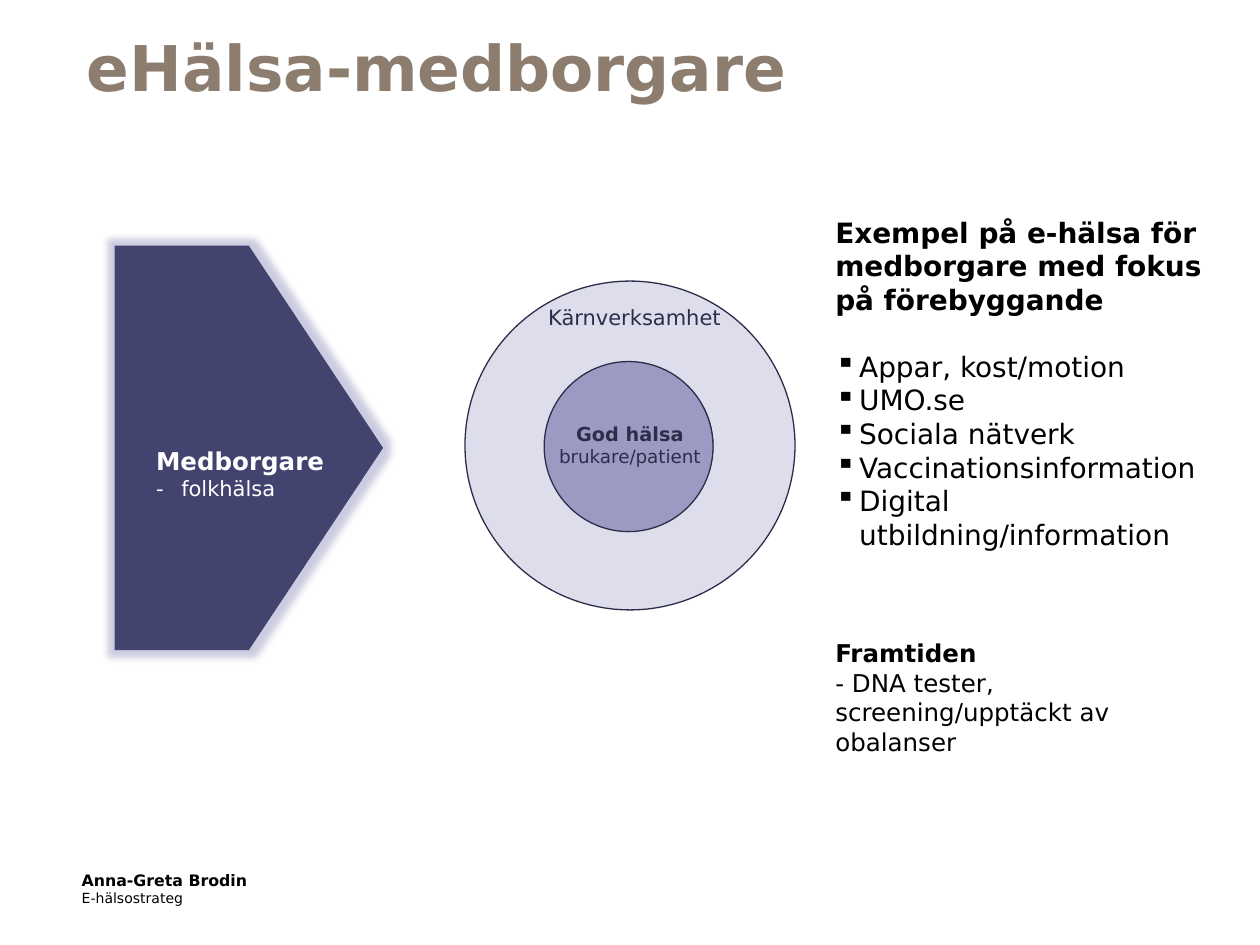
from copy import deepcopy
from dataclasses import dataclass

from lxml.etree import SubElement
from pptx import Presentation
from pptx.dml.color import RGBColor
from pptx.enum.shapes import MSO_SHAPE as Preset
from pptx.enum.text import MSO_ANCHOR as Anchor, MSO_AUTO_SIZE as AutoSize, PP_ALIGN as Align
from pptx.oxml.ns import qn
from pptx.util import Pt


@dataclass(frozen=True)
class Theme:
    font: str = "DejaVu Sans"
    title_color: str = "8C7D6E"
    black: str = "000000"
    white: str = "FFFFFF"
    outline: str = "2D2D4B"
    arrow: str = "434370"
    ring: str = "DDDDEB"
    core: str = "9A9AC2"
    title: float = 36
    heading: float = 16
    subheading: float = 14
    label: float = 12
    core_heading: float = 11
    core_label: float = 10.5
    name: float = 9
    role: float = 8


THEME = Theme()
LEFT, CENTER = Align.LEFT, Align.CENTER
EXAMPLES = ["Appar, kost/motion", "UMO.se", "Sociala nätverk",
            "Vaccinationsinformation", "Digital utbildning/information"]

ARROW = (65.5, 140.4, 153.4, 231.1)
RING = (265.7, 160.6, 188.6, 187.9)
CORE = (311, 206.6, 96.5, 97.2)

RING_LABEL = ((297.4, 170.6, 130.3, 21.6), THEME.outline, CENTER, [
    {"runs": [("Kärnverksamhet", THEME.label, False)]}])
TEXTS = [
    ((82.1, 251.3, 130.3, 38.9), THEME.white, LEFT, [
        {"runs": [("Medborgare", THEME.subheading, True)], "indent": 14.4},
        {"runs": [("-\tfolkhälsa", THEME.label, False)], "indent": 14.4}]),
    ((306, 237.6, 108, 34.6), THEME.outline, CENTER, [
        {"runs": [("God hälsa", THEME.core_heading, True),
                  ("brukare/patient", THEME.core_label, False)]}]),
    ((470.2, 119.5, 226.8, 319.7), THEME.black, LEFT, [
        {"runs": [("Exempel på e-hälsa för medborgare med fokus på förebyggande",
                   THEME.heading, True)], "after": 19},
        *[{"runs": [(example, THEME.heading, False)], "indent": 13.7, "bullet": "▪"}
          for example in EXAMPLES],
        {"runs": [("Framtiden", THEME.subheading, True),
                  ("- DNA tester, screening/upptäckt av obalanser",
                   THEME.subheading, False)], "before": 50}]),
    ((39.6, 493.9, 390.2, 28.1), THEME.black, LEFT, [
        {"runs": [("Anna-Greta Brodin", THEME.name, True)]},
        {"runs": [("E-hälsostrateg", THEME.role, False)], "after": 6}]),
]
TITLE = ((42.5, 9.4, 612, 56.9), THEME.title_color, LEFT, [
    {"runs": [("eHälsa-medborgare", THEME.title, True)]}])


def apply(target, values):
    """Set every attribute in values on target."""
    for name, value in values.items():
        setattr(target, name, value)


def add_preset(shapes, preset, box, fill, line=None):
    """Add a flat filled shape, outlined when a line colour is given."""
    shape = shapes.add_shape(preset, *map(Pt, box))
    shape.shadow.inherit = False
    shape.fill.solid()
    shape.fill.fore_color.rgb = RGBColor.from_string(fill)
    if line:
        shape.line.color.rgb = RGBColor.from_string(line)
        shape.line.width = Pt(0.75)
    else:
        shape.line.fill.background()
    return shape


def add_glow(shape, color, radius, opacity):
    """Surround a shape with a soft glow."""
    effects = shape._element.spPr.find(qn("a:effectLst"))
    glow = SubElement(effects, qn("a:glow"), rad=str(Pt(radius)))
    tint = SubElement(glow, qn("a:srgbClr"), val=color)
    SubElement(tint, qn("a:alpha"), val=str(opacity * 1000))


def fill_paragraph(paragraph, content, color, align):
    """Write one paragraph, with a line break between its runs."""
    properties = paragraph._p.get_or_add_pPr()
    if "indent" in content:
        indent = Pt(content["indent"])
        properties.set("marL", str(indent))
        properties.set("indent", str(-indent))
    if "bullet" in content:
        SubElement(properties, qn("a:buChar"), char=content["bullet"])
    apply(paragraph, {"alignment": align,
                      "space_before": Pt(content.get("before", 0)),
                      "space_after": Pt(content.get("after", 0))})
    for position, (text, size, bold) in enumerate(content["runs"]):
        if position:
            paragraph.add_line_break()
            paragraph._p[-1].append(deepcopy(run._r.rPr))
        run = paragraph.add_run()
        run.text = text
        apply(run.font, {"name": THEME.font, "size": Pt(size), "bold": bold})
        run.font.color.rgb = RGBColor.from_string(color)


def add_text(shapes, box, color, align, paragraphs, **frame_format):
    """Add a wrapped text box holding the given paragraphs."""
    frame = shapes.add_textbox(*map(Pt, box)).text_frame
    apply(frame, {"word_wrap": True, "auto_size": AutoSize.SHAPE_TO_FIT_TEXT, **frame_format})
    for position, content in enumerate(paragraphs):
        paragraph = frame.add_paragraph() if position else frame.paragraphs[0]
        fill_paragraph(paragraph, content, color, align)


def main():
    """Build and save the slide."""
    presentation = Presentation()
    apply(presentation, {"slide_width": Pt(720), "slide_height": Pt(540)})
    shapes = presentation.slides.add_slide(presentation.slide_layouts[6]).shapes
    arrow = add_preset(shapes, Preset.PENTAGON, ARROW, THEME.arrow)
    add_glow(arrow, THEME.core, 8, 50)
    circles = shapes.add_group_shape().shapes
    ring = add_preset(circles, Preset.DONUT, RING, THEME.ring, THEME.outline)
    ring.adjustments[0] = 0.25
    add_preset(circles, Preset.OVAL, CORE, THEME.core, THEME.outline)
    add_text(circles, *RING_LABEL)
    for text in TEXTS:
        add_text(shapes, *text)
    add_text(shapes, *TITLE, auto_size=AutoSize.NONE, vertical_anchor=Anchor.MIDDLE)
    presentation.save("out.pptx")


if __name__ == "__main__":
    main()
